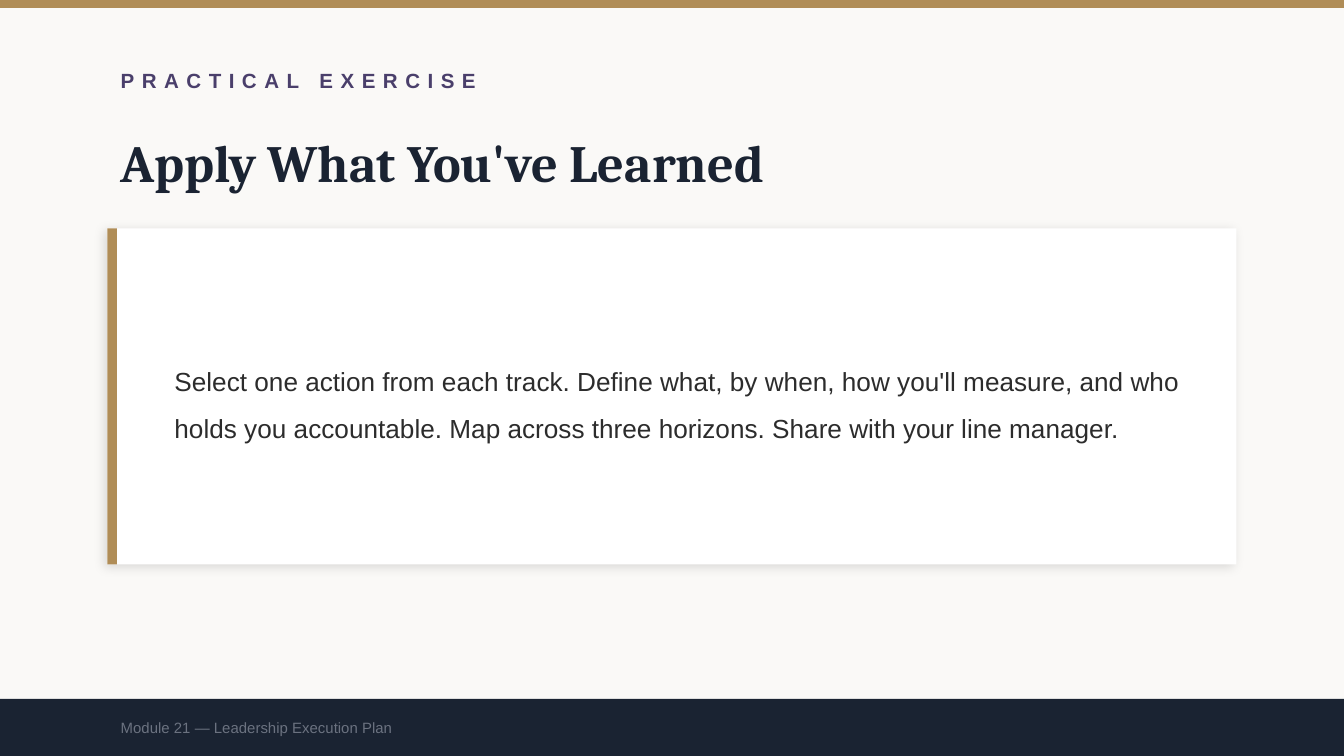
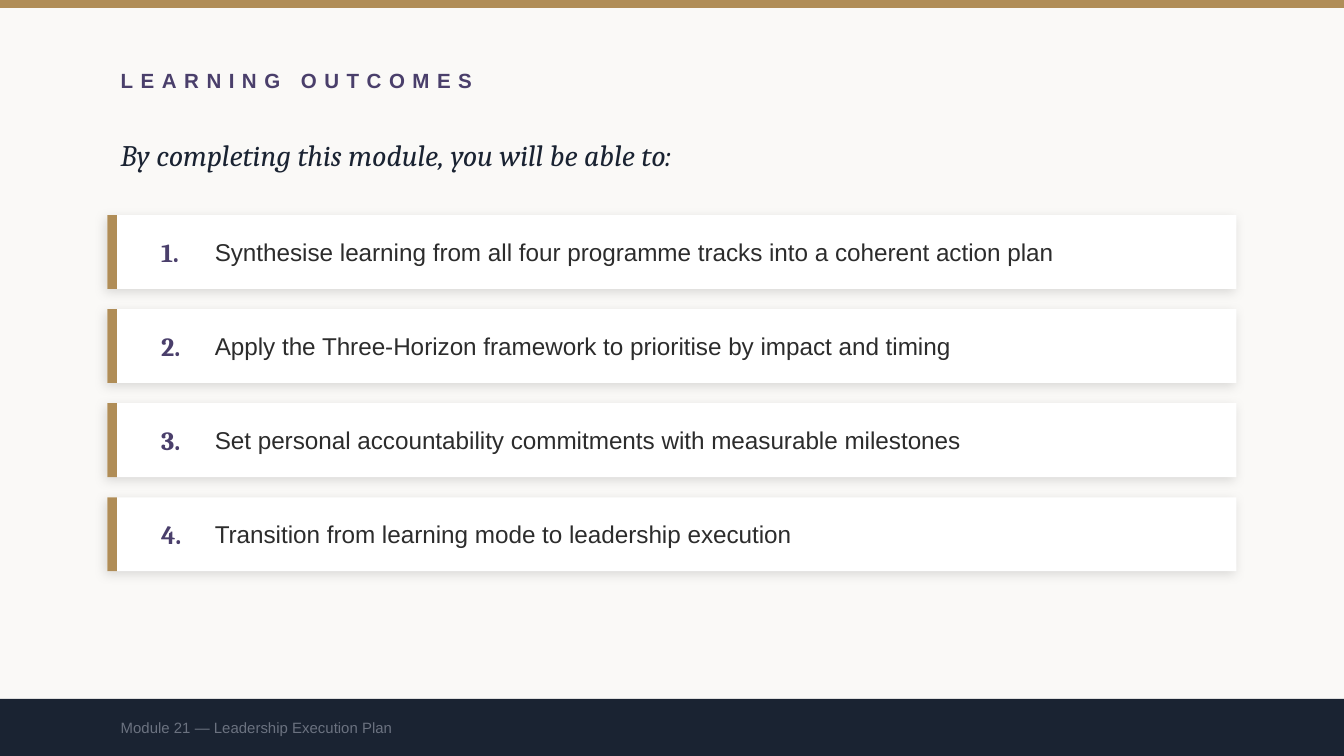
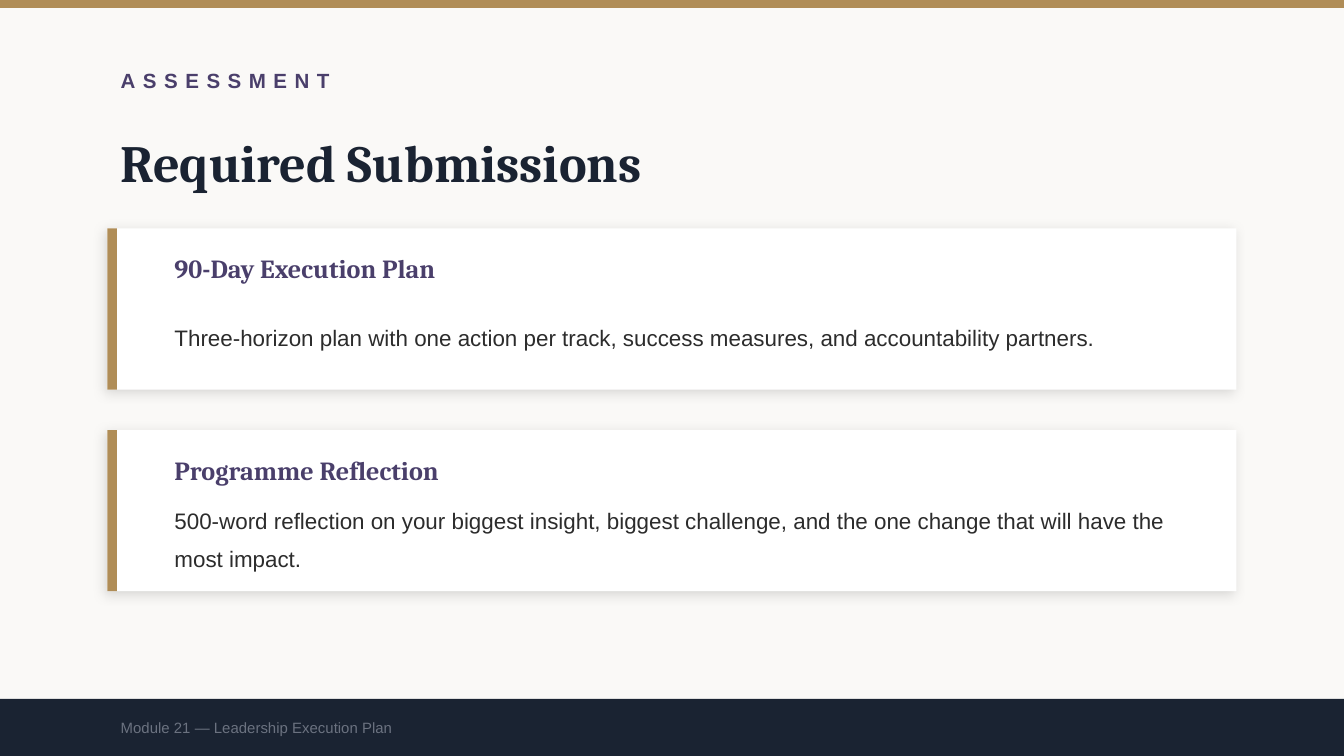
import pptx
import pptx.util
import pptx.dml.color
import pptx.enum.shapes
import pptx.enum.text
import pptx.oxml.ns
from lxml import etree

Inches = pptx.util.Inches
RGBColor = pptx.dml.color.RGBColor

PAPER = RGBColor(0xFA, 0xF9, 0xF7)
WHITE = RGBColor(0xFF, 0xFF, 0xFF)
GOLD = RGBColor(0xB0, 0x8D, 0x57)
PURPLE = RGBColor(0x4A, 0x3F, 0x6B)
NAVY = RGBColor(0x1A, 0x23, 0x32)
INK = RGBColor(0x2C, 0x2C, 0x2C)
GRAY = RGBColor(0x6B, 0x72, 0x80)
SANS, SERIF = "Arial", "Cambria"
SLIDE_W = 10
SLIDE_H = SLIDE_W * 9 / 16
MARGIN, CARD_W, TEXT_W = 0.8, 8.4, 8
FOOTER_TOP = 5.2
FOOTER_H = SLIDE_H - FOOTER_TOP

SHADOW = (
    '<a:outerShdw xmlns:a="http://schemas.openxmlformats.org/drawingml/2006/main" '
    'blurRad="76200" dist="25400" dir="8100000" algn="bl" rotWithShape="0">'
    '<a:srgbClr val="000000"><a:alpha val="12000"/></a:srgbClr></a:outerShdw>'
)


def add_rect(s, left, top, width, height, color, raised=False):
    sp = s.shapes.add_shape(
        pptx.enum.shapes.MSO_SHAPE.RECTANGLE,
        Inches(left), Inches(top), Inches(width), Inches(height))
    sp.fill.solid()
    sp.fill.fore_color.rgb = color
    sp.line.fill.background()
    sp.shadow.inherit = False
    if raised:
        effects = sp._element.spPr.find(pptx.oxml.ns.qn("a:effectLst"))
        effects.append(etree.fromstring(SHADOW))


def add_text(s, left, top, width, height, text, size, font, color,
             bold=False, italic=False, leading=None, tracking=None):
    tf = s.shapes.add_textbox(
        Inches(left), Inches(top), Inches(width), Inches(height)).text_frame
    tf.word_wrap = True
    tf.vertical_anchor = pptx.enum.text.MSO_ANCHOR.MIDDLE
    p = tf.paragraphs[0]
    if leading:
        p.line_spacing = leading
    r = p.add_run()
    r.text = text
    r.font.size = pptx.util.Pt(size)
    r.font.name = font
    r.font.color.rgb = color
    r.font.bold = bold
    r.font.italic = italic
    if tracking:
        r._r.get_or_add_rPr().set("spc", str(tracking * 100))


prs = pptx.Presentation()
prs.slide_width = Inches(SLIDE_W)
prs.slide_height = Inches(SLIDE_H)

exercise = (
    "Select one action from each track. Define what, by when, how you'll measure, "
    "and who holds you accountable. Map across three horizons. "
    "Share with your line manager."
)
outcomes = [
    "Synthesise learning from all four programme tracks into a coherent action plan",
    "Apply the Three-Horizon framework to prioritise by impact and timing",
    "Set personal accountability commitments with measurable milestones",
    "Transition from learning mode to leadership execution",
]
submissions = [
    ("90-Day Execution Plan",
     "Three-horizon plan with one action per track, success measures, "
     "and accountability partners."),
    ("Programme Reflection",
     "500-word reflection on your biggest insight, biggest challenge, "
     "and the one change that will have the most impact."),
]

pages = [
    ("PRACTICAL EXERCISE", 1.7, 2.5, 0, 1),
    ("LEARNING OUTCOMES", 1.6, 0.55, 0.7, len(outcomes)),
    ("ASSESSMENT", 1.7, 1.2, 1.5, len(submissions)),
]

for kicker, first_top, card_h, pitch, count in pages:
    s = prs.slides.add_slide(prs.slide_layouts[6])
    s.background.fill.solid()
    s.background.fill.fore_color.rgb = PAPER
    add_rect(s, 0, 0, SLIDE_W, 0.06, GOLD)
    add_text(s, MARGIN, 0.4, TEXT_W, 0.4, kicker, 11, SANS, PURPLE,
             bold=True, tracking=4)
    for i in range(count):
        top = first_top + i * pitch
        add_rect(s, MARGIN, top, CARD_W, card_h, WHITE, raised=True)
        add_rect(s, MARGIN, top, 0.07, card_h, GOLD)

exercise_slide, outcomes_slide, assessment_slide = prs.slides

for s, title in [(exercise_slide, "Apply What You've Learned"),
                 (assessment_slide, "Required Submissions")]:
    add_text(s, MARGIN, 0.9, TEXT_W, 0.6, title, 28, SERIF, NAVY, bold=True)

add_text(exercise_slide, 1.2, 1.9, 7.7, 2.1, exercise, 14, SANS, INK, leading=1.5)

s = outcomes_slide
add_text(s, MARGIN, 0.9, TEXT_W, 0.5, "By completing this module, you will be able to:",
         16, SERIF, NAVY, italic=True)
for i, outcome in enumerate(outcomes):
    top = 1.6 + i * 0.7
    add_text(s, 1.1, top, 0.4, 0.55, f"{i + 1}.", 14, SERIF, PURPLE, bold=True)
    add_text(s, 1.5, top, 7.4, 0.55, outcome, 13, SANS, INK)

s = assessment_slide
for i, (name, detail) in enumerate(submissions):
    top = 1.7 + i * 1.5
    add_text(s, 1.2, top + 0.12, 7.7, 0.35, name, 14, SERIF, PURPLE, bold=True)
    add_text(s, 1.2, top + 0.5, 7.7, 0.55, detail, 12, SANS, INK, leading=1.4)

for s in prs.slides:
    add_rect(s, 0, FOOTER_TOP, SLIDE_W, FOOTER_H, NAVY)
    add_text(s, MARGIN, FOOTER_TOP, TEXT_W, FOOTER_H,
             "Module 21 — Leadership Execution Plan", 8, SANS, GRAY)

prs.save("out.pptx")
